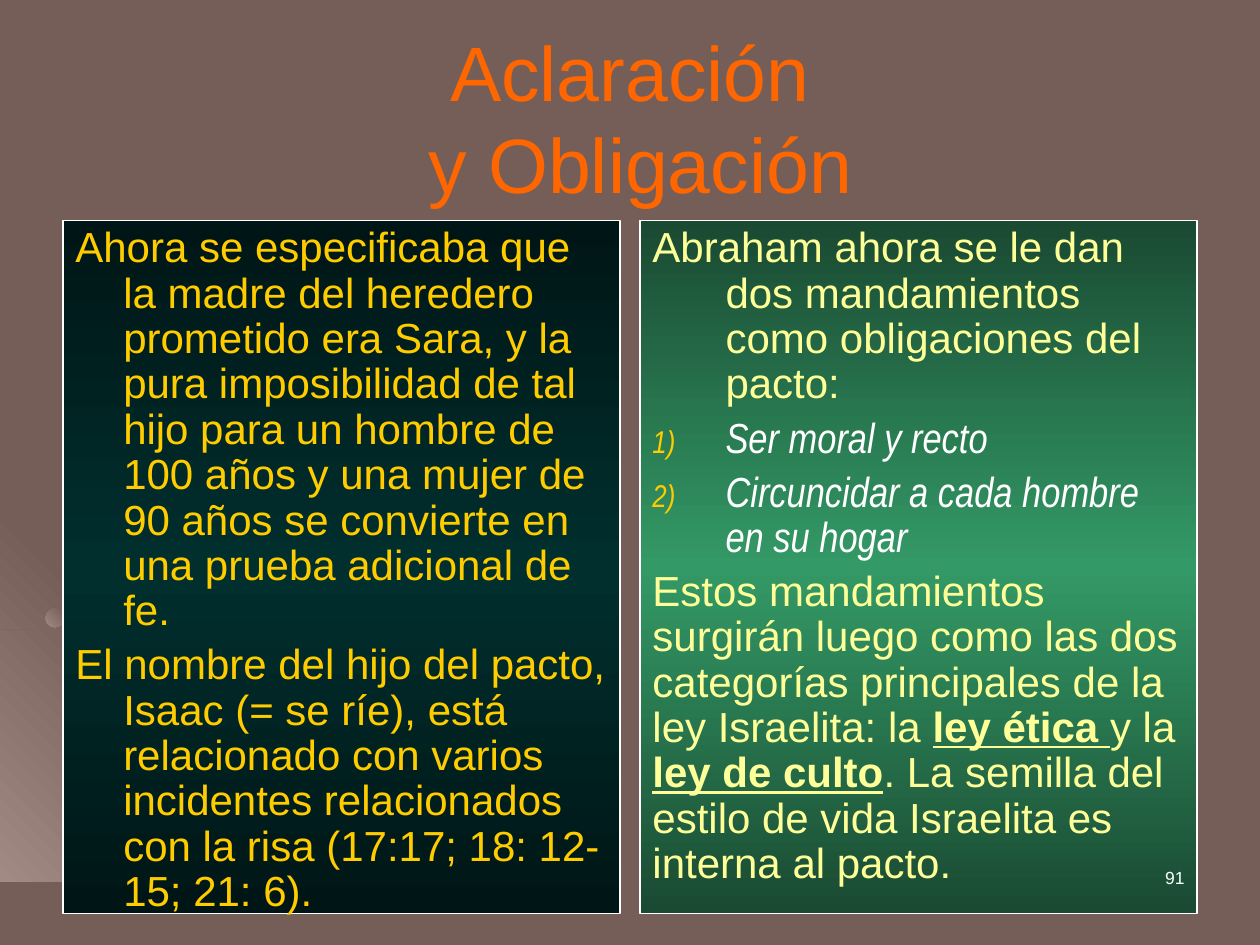
from lxml import etree
from pptx import Presentation, util as u
from pptx.dml.color import RGBColor
from pptx.enum import shapes, text
from pptx.oxml.ns import qn

# Content
TITLE = "Aclaración\v y Obligación"
PAGE = "91"
YELLOW, CREAM, WHITE, ORANGE = "FFCC00", "FFFF99", "FFFFFF", "FF6600"
BROWN, TAUPE = "765E58", "A28A84"

KEY = dict(bold=True, underline=True)
COMMAND = dict(font="Arial Narrow", color=WHITE, italic=True)

# Each panel: ends and middle of the gradient, text colour, paragraphs.
# Each paragraph: hanging indent, numbered or not, runs with their format.
PANELS = [
    ("001616", "002F2E", YELLOW, [
        (0.38, False, [("Ahora se especificaba que la madre del heredero prometido era "
                        "Sara, y la pura imposibilidad de tal hijo para un hombre de 100 "
                        "años y una mujer de 90 años se convierte en una prueba adicional "
                        "de fe.", {})]),
        (0.38, False, [("El nombre del hijo del pacto, Isaac (= se ríe), está relacionado "
                        "con varios incidentes relacionados con la risa (17:17; 18: 12-15; "
                        "21: 6).", {})]),
    ]),
    ("1A4A32", "339966", CREAM, [
        (0.58, False, [("Abraham ahora se le dan dos mandamientos como obligaciones del "
                        "pacto:", {})]),
        (0.58, True, [("Ser moral y recto", COMMAND)]),
        (0.58, True, [("Circuncidar a cada hombre en su hogar", COMMAND)]),
        (0, False, [("Estos mandamientos surgirán luego como las dos categorías "
                     "principales de la ley Israelita: la ", {}),
                    ("ley ética ", KEY), ("y la ", {}), ("ley de culto", KEY),
                    (". La semilla del estilo de vida Israelita es interna al pacto.", {})]),
    ]),
]

# Corner ornament: outlines in inches, gradient colours, angle
BAND = [BROWN, TAUPE, BROWN]
OUTLINES = [
    ([(0.57, 4.47), (0.28, 4.41), (0, 4.35), (0, 4.38), (0.28, 4.43), (0.56, 4.49),
      (0.97, 4.61), (1.35, 4.78), (1.73, 4.99), (2.08, 5.23), (2.41, 5.49), (2.71, 5.79),
      (2.98, 6.12), (3.23, 6.49), (3.37, 6.73), (3.5, 6.98), (3.6, 7.23), (3.7, 7.49),
      (3.72, 7.49), (3.62, 7.23), (3.52, 6.98), (3.39, 6.73), (3.25, 6.48), (3, 6.11),
      (2.72, 5.78), (2.42, 5.48), (2.09, 5.21), (1.74, 4.97), (1.36, 4.77), (0.98, 4.59)],
     BAND, 45),
    ([(3.22, 7.49), (0, 7.49), (0, 4.27)], [TAUPE, BROWN, TAUPE], 315),
    ([(2.85, 7.14), (2.94, 7.32), (3.01, 7.49), (3.03, 7.49), (2.96, 7.3), (2.86, 7.12),
      (2.66, 6.76), (2.42, 6.4), (2.15, 6.06), (1.84, 5.76), (1.52, 5.49), (1.17, 5.26),
      (0.79, 5.05), (0.41, 4.88), (0, 4.75), (0, 4.77), (0.39, 4.9), (0.77, 5.07),
      (1.15, 5.28), (1.5, 5.51), (1.83, 5.78), (2.13, 6.08), (2.4, 6.41), (2.65, 6.77)],
     BAND, 45),
    ([(0, 4.42), (0, 4.44), (0.36, 4.57), (0.74, 4.75), (1.09, 4.94), (1.42, 5.18),
      (1.73, 5.44), (2.02, 5.75), (2.27, 6.05), (2.52, 6.41), (2.67, 6.67), (2.8, 6.94),
      (2.92, 7.22), (3.01, 7.49), (3.03, 7.49), (2.94, 7.2), (2.82, 6.93), (2.69, 6.65),
      (2.54, 6.39), (2.29, 6.03), (2.04, 5.73), (1.75, 5.43), (1.44, 5.16), (1.11, 4.93),
      (0.76, 4.73), (0.39, 4.55)], BAND, 45),
]
# Beads: left, top, diameter, angle
BEADS = [(0.36, 4.83, 0.15, 315), (2.67, 6.74, 0.16, 45), (1.37, 4.73, 0.21, 315)]

# Layout
WIDTH, HEIGHT, MARGIN = 10, 7.5, 0.5
GAP, PANEL_TOP, PANEL_HEIGHT = 0.16, 1.75, 5.5
PANEL_WIDTH = (WIDTH - 2 * MARGIN - GAP) / 2


def rgb(value):
    return RGBColor.from_string(value)


def box(left, top, width, height):
    return [u.Inches(v) for v in (left, top, width, height)]


def write(paragraph, words, size=24, font="Arial", color=WHITE,
          bold=False, italic=False, underline=False):
    run = paragraph.add_run()
    run.text = words
    face = run.font
    face.size, face.name = u.Pt(size), font
    face.bold, face.italic, face.underline = bold, italic, underline
    face.color.rgb = rgb(color)


def shade(shape, colors, angle, outline=None):
    """Fill with evenly spaced colours; the angle turns clockwise."""
    shape.shadow.inherit = False
    shape.fill.gradient()
    shape.fill.gradient_angle = 360 - angle
    stops = shape.element.find(".//" + qn("a:gsLst"))
    for old in list(stops):
        stops.remove(old)
    for i, color in enumerate(colors):
        stop = etree.SubElement(stops, qn("a:gs"), pos=str(100000 * i // (len(colors) - 1)))
        etree.SubElement(stop, qn("a:srgbClr"), val=color)
    if outline:
        shape.line.color.rgb = rgb(outline)
        shape.line.width = u.Pt(1)
    else:
        shape.line.fill.background()


def indent(paragraph, hanging, numbered):
    props = paragraph._p.get_or_add_pPr()
    props.set("marL", str(u.Inches(hanging)))
    props.set("indent", str(-u.Inches(hanging)))
    if numbered:
        tint = etree.SubElement(props, qn("a:buClr"))
        etree.SubElement(tint, qn("a:srgbClr"), val=YELLOW)
        etree.SubElement(props, qn("a:buSzPct"), val="75000")
        etree.SubElement(props, qn("a:buAutoNum"), type="arabicParenR")


prs = Presentation()
prs.slide_width, prs.slide_height = u.Inches(WIDTH), u.Inches(HEIGHT)
slide = prs.slides.add_slide(prs.slide_layouts[5])
slide.background.fill.solid()
slide.background.fill.fore_color.rgb = rgb(BROWN)

# Corner ornament
for points, colors, angle in OUTLINES:
    builder = slide.shapes.build_freeform(*points[0], scale=u.Inches(1))
    builder.add_line_segments(points[1:], close=True)
    shade(builder.convert_to_shape(), colors, angle)
for left, top, diameter, angle in BEADS:
    bead = slide.shapes.add_shape(shapes.MSO_SHAPE.OVAL, *box(left, top, diameter, diameter))
    shade(bead, [TAUPE, BROWN], angle)

# Title
title = slide.shapes.title
title.left, title.top, title.width, title.height = box(MARGIN, 0.3, WIDTH - 2 * MARGIN, 1.25)
title.text_frame.vertical_anchor = text.MSO_ANCHOR.MIDDLE
heading = title.text_frame.paragraphs[0]
heading.alignment = text.PP_ALIGN.CENTER
for i, line in enumerate(TITLE.split("\v")):
    if i:
        heading.add_line_break()
    write(heading, line, size=44, color=ORANGE)

# Two panels
for column, (edge, middle, color, paragraphs) in enumerate(PANELS):
    left = MARGIN + column * (PANEL_WIDTH + GAP)
    panel = slide.shapes.add_shape(shapes.MSO_SHAPE.RECTANGLE,
                                   *box(left, PANEL_TOP, PANEL_WIDTH, PANEL_HEIGHT))
    shade(panel, [edge, middle, edge], 90, outline=WHITE)
    frame = panel.text_frame
    frame.word_wrap = True
    frame.vertical_anchor = text.MSO_ANCHOR.TOP
    for i, (hanging, numbered, runs) in enumerate(paragraphs):
        paragraph = frame.add_paragraph() if i else frame.paragraphs[0]
        paragraph.alignment = text.PP_ALIGN.LEFT
        paragraph.line_spacing, paragraph.space_before = 0.9, u.Pt(5)
        indent(paragraph, hanging, numbered)
        for words, look in runs:
            write(paragraph, words, **{"color": color, **look})

# Page number
number = slide.shapes.add_textbox(*box(7.17, 6.83, 2.33, 0.5)).text_frame
number.word_wrap = True
number.paragraphs[0].alignment = text.PP_ALIGN.RIGHT
write(number.paragraphs[0], PAGE, size=10)

prs.save("out.pptx")
